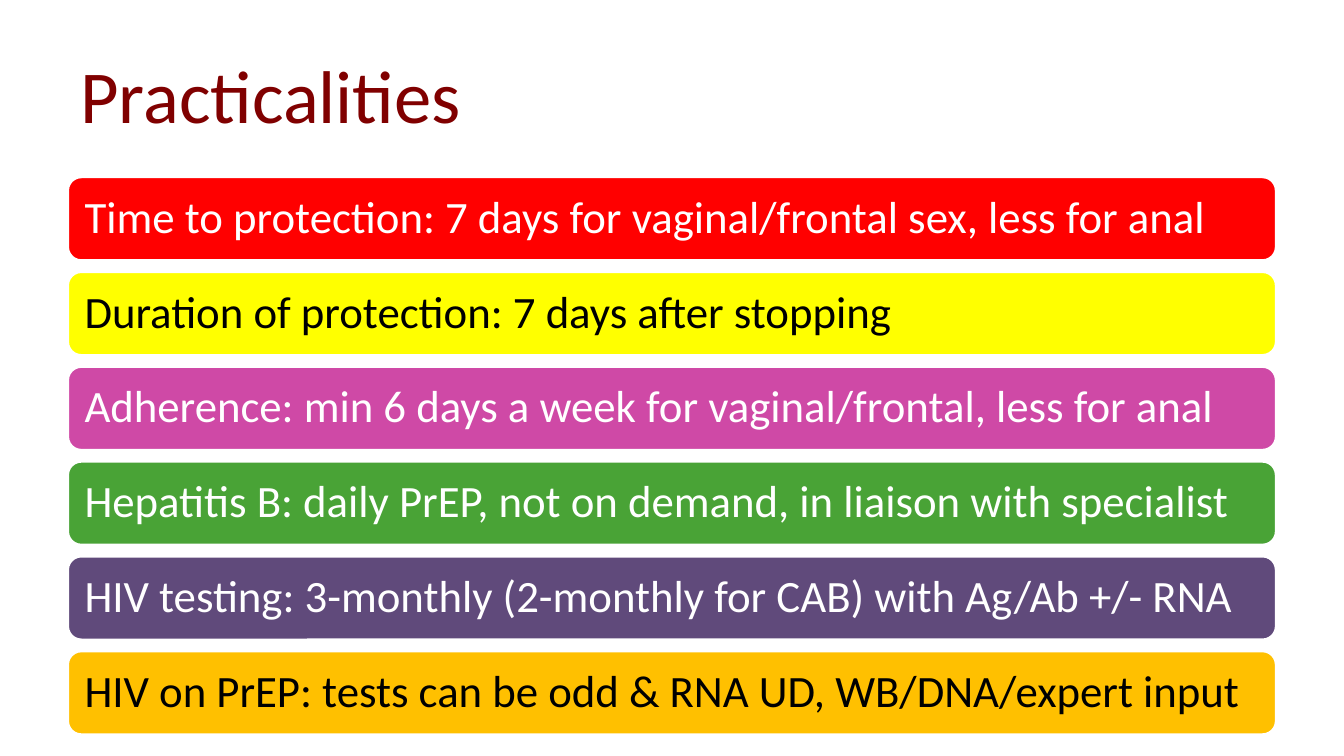
import pptx
import pptx.util
import pptx.dml.color
import pptx.enum.shapes
import pptx.enum.text

Pt = pptx.util.Pt
MIDDLE = pptx.enum.text.MSO_ANCHOR.MIDDLE
LEFT = pptx.enum.text.PP_ALIGN.LEFT
ROUNDED = pptx.enum.shapes.MSO_SHAPE.ROUNDED_RECTANGLE

BARS = [
    ("Time to protection: 7 days for vaginal/frontal sex, less for anal", "FF0000", "FFFFFF"),
    ("Duration of protection: 7 days after stopping", "FFFF00", "000000"),
    ("Adherence: min 6 days a week for vaginal/frontal, less for anal", "CF49A6", "FFFFFF"),
    ("Hepatitis B: daily PrEP, not on demand, in liaison with specialist", "49A336", "FFFFFF"),
    ("HIV testing: 3-monthly (2-monthly for CAB) with Ag/Ab +/- RNA", "604A7B", "FFFFFF"),
    ("HIV on PrEP: tests can be odd & RNA UD, WB/DNA/expert input", "FFC000", "000000"),
]


def color(value):
    return pptx.dml.color.RGBColor.from_string(value)


def apply_format(target, values):
    for name, value in values.items():
        setattr(target, name, value)


def write_text(shape, text, size, ink, side, edge, spacing):
    frame = shape.text_frame
    apply_format(frame, {
        "word_wrap": True, "vertical_anchor": MIDDLE,
        "margin_left": Pt(side), "margin_right": Pt(side),
        "margin_top": Pt(edge), "margin_bottom": Pt(edge),
    })
    para = frame.paragraphs[0]
    apply_format(para, {"alignment": LEFT, "line_spacing": spacing})
    span = para.add_run()
    span.text = text
    apply_format(span.font, {"name": "Calibri", "size": Pt(size)})
    span.font.color.rgb = color(ink)


def add_title(page, left, top, width, height):
    box = page.shapes.add_textbox(Pt(left), Pt(top), Pt(width), Pt(height))
    write_text(box, "Practicalities", 40, "800000", 7.2, 3.6, 1.0)


def add_bars(page, left, top, width, height, gap=5.4):
    bar_height = (height - gap * (len(BARS) - 1)) / len(BARS)
    for index, (text, fill, ink) in enumerate(BARS):
        bar_top = top + index * (bar_height + gap)
        bar = page.shapes.add_shape(ROUNDED, Pt(left), Pt(bar_top), Pt(width), Pt(bar_height))
        bar.shadow.inherit = False
        bar.fill.solid()
        bar.fill.fore_color.rgb = color(fill)
        bar.line.color.rgb = color("FFFFFF")
        bar.line.width = Pt(2)
        write_text(bar, text, 24, ink, 7.2, 7.2, 0.9)


def main():
    deck = pptx.Presentation()
    apply_format(deck, {"slide_width": Pt(720), "slide_height": Pt(405)})
    page = deck.slides.add_slide(deck.slide_layouts[6])
    add_bars(page, 36, 94.5, 648, 299.4)
    add_title(page, 36, 16.4, 648, 67.6)
    deck.save("out.pptx")


if __name__ == "__main__":
    main()
